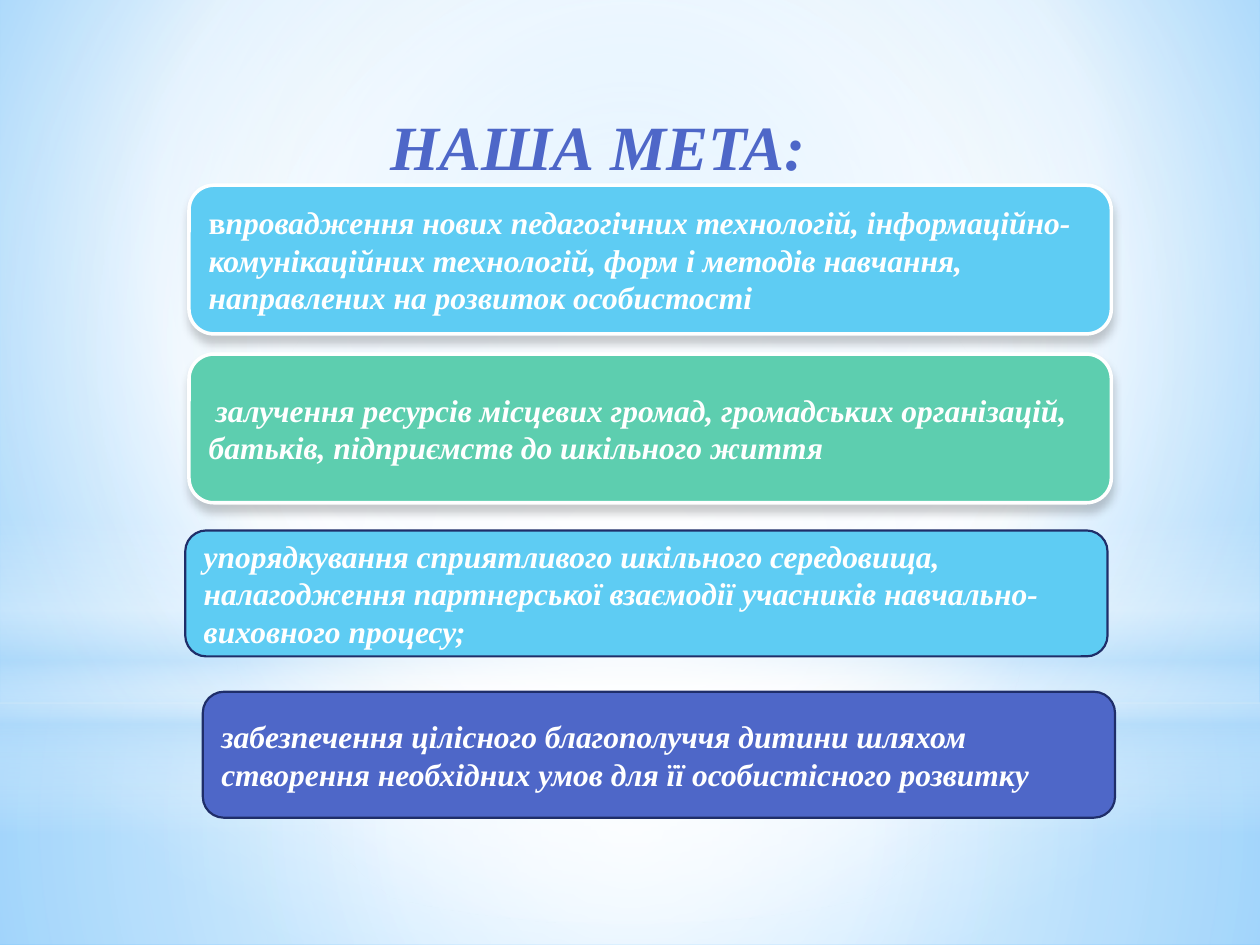
from lxml import etree
from pptx import Presentation
from pptx.dml.color import RGBColor
from pptx.enum.shapes import MSO_SHAPE
from pptx.enum.text import MSO_ANCHOR, MSO_AUTO_SIZE, PP_ALIGN
from pptx.oxml.ns import qn
from pptx.util import Inches, Pt

RECT, OVAL, ROUNDED = MSO_SHAPE.RECTANGLE, MSO_SHAPE.OVAL, MSO_SHAPE.ROUNDED_RECTANGLE
TOP, MIDDLE = MSO_ANCHOR.TOP, MSO_ANCHOR.MIDDLE
LEFT, CENTER = PP_ALIGN.LEFT, PP_ALIGN.CENTER
NO_AUTOFIT = MSO_AUTO_SIZE.NONE
TITLE_ONLY = 5

COLORS = {
    "white": "FFFFFF", "black": "000000", "mist": "B4DCFA",
    "halo": "9ED5FF", "edge": "5BB9FF", "sky": "5ECCF3",
    "mint": "5DCEAF", "indigo": "4E67C8", "navy": "1F2E69",
}
FONT = "Times New Roman"
MIDPOINT = (50, 50, 50, 50)


def color_xml(parent, name, alpha=100):
    color = etree.SubElement(parent, qn("a:srgbClr"), val=COLORS[name])
    if alpha < 100:
        etree.SubElement(color, qn("a:alpha"), val=str(alpha * 1000))


class Deck:
    """Holds the page size, the style and the current slide."""

    def __init__(self, width, height):
        self.prs = Presentation()
        self.width, self.height = Inches(width), Inches(height)
        self.prs.slide_width, self.prs.slide_height = self.width, self.height
        self.slide = self.prs.slides.add_slide(self.prs.slide_layouts[TITLE_ONLY])

    def place(self, left, top, width, height):
        """Turn percentages of the slide into lengths."""
        return (int(self.width * left / 100), int(self.height * top / 100),
                int(self.width * width / 100), int(self.height * height / 100))

    def gradient(self, fill, owner, stops, focus=None):
        """Radial around the focus insets, or top to bottom without them."""
        fill.solid()
        grad = etree.Element(qn("a:gradFill"), rotWithShape="1")
        stop_list = etree.SubElement(grad, qn("a:gsLst"))
        for position, name, alpha in stops:
            stop = etree.SubElement(stop_list, qn("a:gs"), pos=str(position * 1000))
            color_xml(stop, name, alpha)
        if focus:
            radial = etree.SubElement(grad, qn("a:path"), path="circle")
            insets = {side: str(share * 1000) for side, share in zip("ltrb", focus)}
            etree.SubElement(radial, qn("a:fillToRect"), **insets)
        else:
            etree.SubElement(grad, qn("a:lin"), ang="5400000", scaled="0")
        owner.replace(owner.find(qn("a:solidFill")), grad)

    def background(self, stops, focus):
        fill = self.slide.background.fill
        fill.solid()
        owner = next(self.slide._element.iter(qn("p:bgPr")))
        self.gradient(fill, owner, stops, focus)

    def glow(self, kind, box, stops, focus=None):
        shape = self.slide.shapes.add_shape(kind, *self.place(*box))
        shape.shadow.inherit = False
        shape.line.fill.background()
        self.gradient(shape.fill, shape._element.spPr, stops, focus)

    def style(self, paragraph, size, color, align):
        paragraph.alignment = align
        font = paragraph.font
        font.name, font.size, font.bold = FONT, Pt(size), True
        font.color.rgb = RGBColor.from_string(COLORS[color])

    def title(self, text, box):
        heading = self.slide.shapes.title
        heading.left, heading.top, heading.width, heading.height = self.place(*box)
        frame = heading.text_frame
        frame.text, frame.word_wrap = text, True
        frame.auto_size, frame.vertical_anchor = NO_AUTOFIT, TOP
        paragraph = frame.paragraphs[0]
        self.style(paragraph, 36, "indigo", CENTER)
        paragraph.font.italic = True
        paragraph.space_before, paragraph.space_after = Pt(7.2), Pt(3)
        # The heading lies above the glows
        self.slide.shapes._spTree.append(heading._element)

    def card(self, box, fill, border, weight, lead, text, raised):
        shape = self.slide.shapes.add_shape(ROUNDED, *self.place(*box))
        shape.fill.solid()
        shape.fill.fore_color.rgb = RGBColor.from_string(COLORS[fill])
        shape.line.color.rgb = RGBColor.from_string(COLORS[border])
        shape.line.width = Pt(weight)
        shape.shadow.inherit = False
        if raised:
            effects = shape._element.spPr.find(qn("a:effectLst"))
            shadow = etree.SubElement(
                effects, qn("a:outerShdw"), blurRad=str(Pt(5)), dist=str(Pt(4)),
                dir="5400000", rotWithShape="0")
            color_xml(shadow, "black", 20)
        frame = shape.text_frame
        frame.word_wrap, frame.vertical_anchor = True, MIDDLE
        paragraph = frame.paragraphs[0]
        self.style(paragraph, 18, "white", LEFT)
        if lead:
            opening = paragraph.add_run()
            opening.text = lead
            if lead.isspace():
                opening.font.name, opening.font.italic = "Lato", True
        body = paragraph.add_run()
        body.text, body.font.italic = text, True


def main():
    deck = Deck(10, 7.5)

    # Backdrop
    deck.background([(0, "halo", 100), (60, "white", 100), (100, "edge", 100)],
                    (20, 10, 20, 60))
    deck.glow(RECT, (0, 74.4, 100, 25.6),
              [(0, "white", 91), (37, "white", 76), (100, "mist", 79)], MIDPOINT)
    deck.glow(RECT, (0, 0, 100, 74.4),
              [(0, "white", 89), (48, "white", 62), (100, "mist", 79)], MIDPOINT)
    deck.glow(RECT, (0, 54.93, 100, 33.33),
              [(0, "white", 0), (29, "white", 30), (45, "mist", 40),
               (55, "white", 26), (65, "mist", 60), (100, "white", 0)])
    deck.glow(OVAL, (0, 23.33, 100, 74.4),
              [(0, "white", 100), (56, "white", 0)], MIDPOINT)

    # Heading
    deck.title("НАША МЕТА:", (12.5, 10.67, 70, 50.67))

    # Goals: box, fill, opening run, text, raised
    goals = [
        ((15, 19.6, 73.2, 15.73), "sky", "в",
         "провадження нових педагогічних технологій, інформаційно-комунікаційних "
         "технологій, форм і методів навчання, направлених на розвиток особистості", True),
        ((15, 37.47, 73.2, 15.73), "mint", " ",
         "залучення ресурсів місцевих громад, громадських організацій, батьків, "
         "підприємств до шкільного життя", True),
        ((14.7, 56.13, 73.2, 13.33), "sky", "",
         "упорядкування сприятливого шкільного середовища, налагодження партнерської "
         "взаємодії учасників навчально-виховного процесу;", False),
        ((16.1, 73.2, 72.4, 13.33), "indigo", "",
         "забезпечення цілісного благополуччя дитини шляхом створення необхідних "
         "умов для її особистісного розвитку", False),
    ]
    for box, fill, lead, text, raised in goals:
        border, weight = ("white", 2) if raised else ("navy", 1.25)
        deck.card(box, fill, border, weight, lead, text, raised)

    deck.prs.save("out.pptx")


if __name__ == "__main__":
    main()
